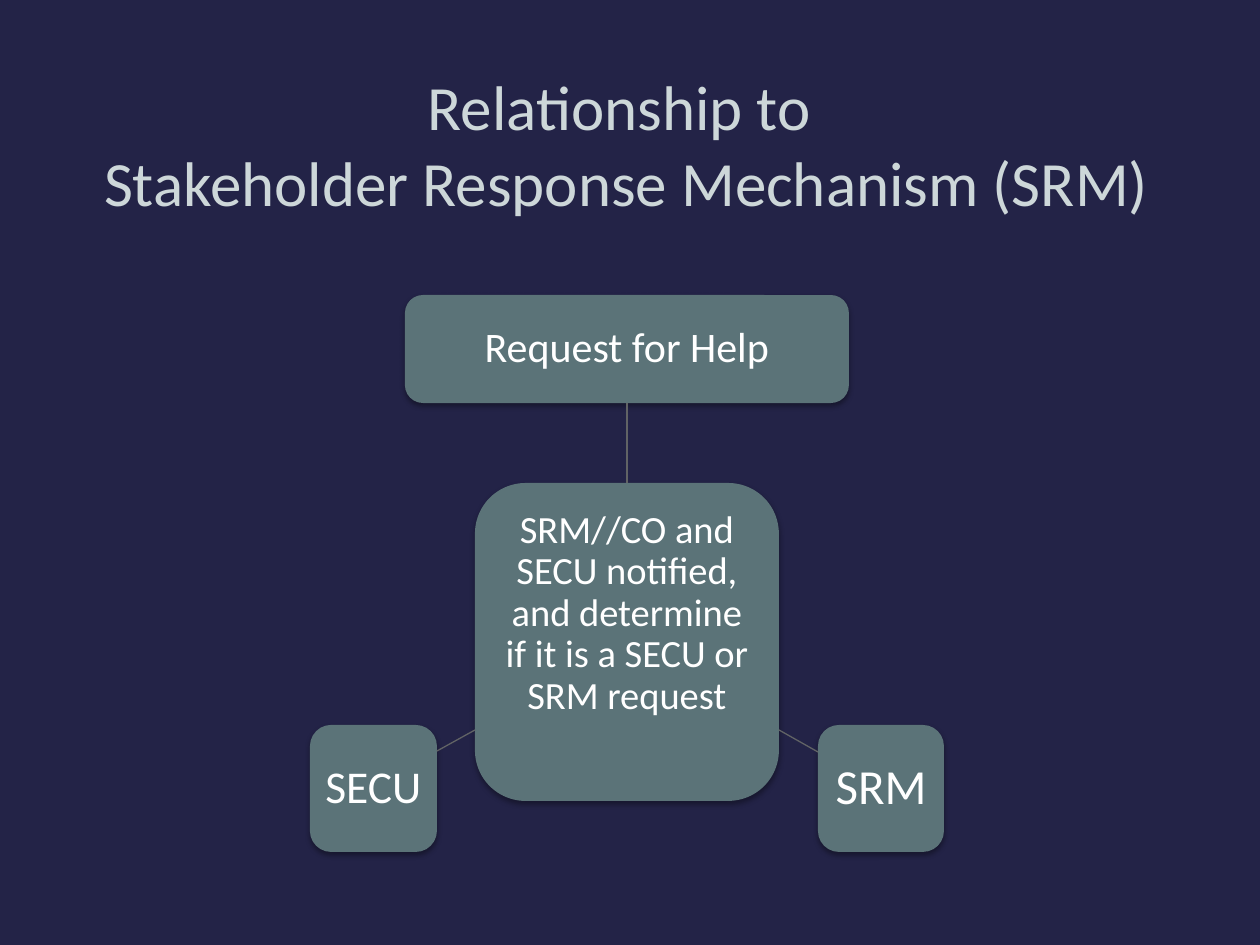
from lxml import etree
from pptx import Presentation
from pptx.dml.color import RGBColor
from pptx.enum.shapes import MSO_CONNECTOR, MSO_SHAPE
from pptx.enum.text import MSO_ANCHOR, PP_ALIGN
from pptx.oxml import parse_xml
from pptx.oxml.ns import nsdecls, qn
from pptx.util import Pt

PX = 914400 / 126
NAVY = RGBColor(0x23, 0x23, 0x47)
SLATE = RGBColor(0x5B, 0x73, 0x78)
MIST = RGBColor(0xCD, 0xD7, 0xD9)
GREY = RGBColor(0x61, 0x63, 0x65)
WHITE = RGBColor(0xFF, 0xFF, 0xFF)
FONT = "Calibri"
SHADOW = (
    f'<a:effectLst {nsdecls("a")}>'
    '<a:outerShdw blurRad="39370" dist="22860" dir="5400000" rotWithShape="0">'
    '<a:srgbClr val="000000"><a:alpha val="35000"/></a:srgbClr>'
    '</a:outerShdw></a:effectLst>'
)


def px(*lengths):
    return [round(length * PX) for length in lengths]


def add_run(paragraph, text, size, color):
    run = paragraph.add_run()
    run.text = text
    run.font.name = FONT
    run.font.size = Pt(size)
    run.font.color.rgb = color


prs = Presentation()
prs.slide_width, prs.slide_height = px(1260, 945)
slide = prs.slides.add_slide(prs.slide_layouts[6])
slide.background.fill.solid()
slide.background.fill.fore_color.rgb = NAVY

title = slide.shapes.add_textbox(*px(52, 28, 1149, 230)).text_frame
title.word_wrap = True
title.vertical_anchor = MSO_ANCHOR.MIDDLE
heading = title.paragraphs[0]
heading.alignment = PP_ALIGN.CENTER
add_run(heading, "Relationship to ", 36, MIST)
heading.add_line_break()
add_run(heading, "Stakeholder Response Mechanism (SRM)", 36, MIST)

# text, box, font size, inset, bottom inset
STEPS = [
    ("Request for Help", (405, 295, 444, 108), 24, 9, 9),
    ("SRM//CO and SECU notified, and determine if it is a SECU or SRM request",
     (475, 483, 304, 318), 22, 8, 64),
    ("SECU", (310, 725, 127, 127), 26, 8, 8),
    ("SRM", (818, 725, 126, 127), 28, 9, 9),
]
boxes = []
for text, bounds, size, inset, bottom_inset in STEPS:
    box = slide.shapes.add_shape(MSO_SHAPE.ROUNDED_RECTANGLE, *px(*bounds))
    box.fill.solid()
    box.fill.fore_color.rgb = SLATE
    box.line.fill.background()
    box.shadow.inherit = False
    properties = box.element.spPr
    properties.replace(properties.find(qn("a:effectLst")), parse_xml(SHADOW))
    frame = box.text_frame
    frame.word_wrap = True
    frame.vertical_anchor = MSO_ANCHOR.MIDDLE
    frame.margin_left, frame.margin_top, frame.margin_right = px(inset, inset, inset)
    frame.margin_bottom, = px(bottom_inset)
    label = frame.paragraphs[0]
    label.alignment = PP_ALIGN.CENTER
    label.line_spacing = 0.9
    add_run(label, text, size, WHITE)
    boxes.append(box)

request, decision, *_ = boxes
LINKS = [(627, 403, 627, 483), (475, 730, 437, 751), (779, 730, 818, 752)]
links = []
for ends in LINKS:
    link = slide.shapes.add_connector(MSO_CONNECTOR.STRAIGHT, *px(*ends))
    link.line.color.rgb = GREY
    link.line.width = Pt(0.75)
    etree.SubElement(link.element.spPr, qn("a:effectLst"))
    links.append(link)
links[0].begin_connect(request, 2)
links[0].end_connect(decision, 0)

prs.save("out.pptx")
